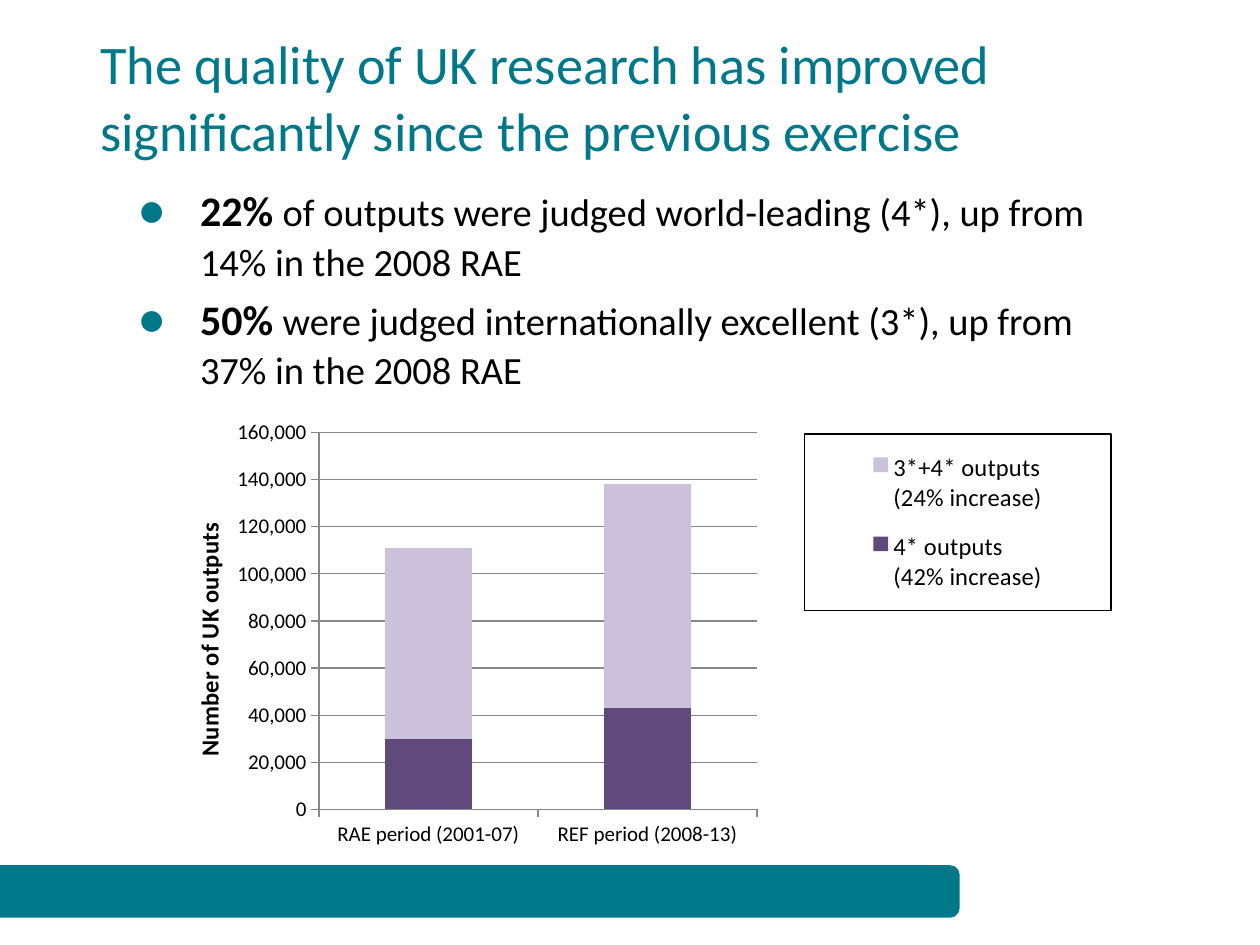
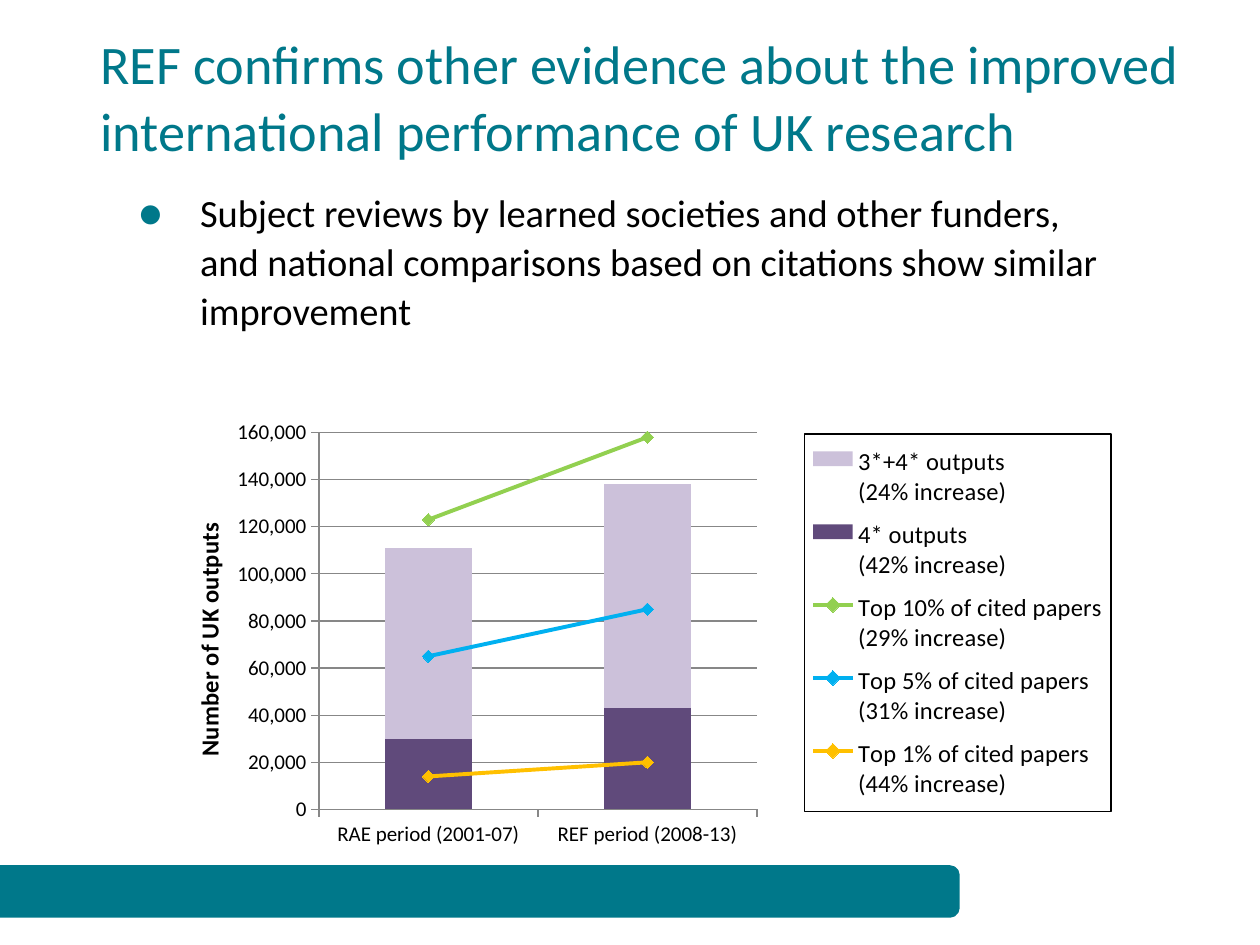
from dataclasses import dataclass
from typing import Any

from lxml import etree
from pptx import Presentation
from pptx import util as u
from pptx.chart.data import CategoryChartData
from pptx.dml.color import RGBColor
from pptx.enum import chart as charts, shapes, text
from pptx.oxml import parse_xml
from pptx.oxml.ns import nsdecls, qn

EMU_PER_PX = 914400 / 126
FONT = "Calibri"
TEAL, BLACK, GREY = "00788A", "000000", "878787"
PERIODS = ("RAE period (2001-07)", "REF period (2008-13)")
AXIS_TOP, AXIS_STEP = 160000, 20000
LINE_AXES = (50010, 50020)


@dataclass(frozen=True)
class Area:
    left: int
    top: int
    width: int
    height: int

    def emu(self) -> list[int]:
        return [px(side) for side in (self.left, self.top, self.width, self.height)]


@dataclass(frozen=True)
class Measure:
    name: str
    values: tuple[int, int]
    colour: str


@dataclass(frozen=True)
class Bullet:
    body: str
    lead: str = ""


@dataclass(frozen=True)
class Content:
    title: str
    bullets: tuple[Bullet, ...]
    legend_height: int
    lines: tuple[Measure, ...] = ()


TITLE_AREA = Area(88, 39, 1113, 113)
BAND_AREA = Area(-11, 867, 969, 49)
BULLET_AREA = Area(137, 186, 974, 129)
CHART_AREA = Area(178, 403, 965, 462)

OUTPUTS = (
    Measure("4* outputs\n(42% increase)", (30000, 43000), "604A7B"),
    Measure("3*+4* outputs\n(24% increase)", (81000, 95000), "CCC1DA"),
)
CITATIONS = (
    Measure("Top 10% of cited papers\n(29% increase)", (123000, 158000), "92D050"),
    Measure("Top 5% of cited papers\n(31% increase)", (65000, 85000), "00B0F0"),
    Measure("Top 1% of cited papers\n(44% increase)", (14000, 20000), "FFC000"),
)
CONTENTS = (
    Content(
        "The quality of UK research has improved significantly since the previous exercise",
        (
            Bullet("of outputs were judged world-leading (4*), up from 14% in the 2008 RAE", "22% "),
            Bullet("were judged internationally excellent (3*), up from 37% in the 2008 RAE", "50% "),
        ),
        legend_height=177,
    ),
    Content(
        "REF confirms other evidence about the improved international performance of UK research",
        (
            Bullet(
                "Subject reviews by learned societies and other funders, and national "
                "comparisons based on citations show similar improvement"
            ),
        ),
        legend_height=378,
        lines=CITATIONS,
    ),
)


def px(length: int) -> int:
    return round(length * EMU_PER_PX)


def rgb(colour: str) -> RGBColor:
    return RGBColor.from_string(colour)


def assign(target: Any, values: dict[str, Any]) -> None:
    for name, value in values.items():
        setattr(target, name, value)


def set_font(font: Any, size: float, colour: str = BLACK, bold: bool = False) -> None:
    assign(font, {"name": FONT, "size": u.Pt(size), "bold": bold})
    font.color.rgb = rgb(colour)


def paint(format_: Any, colour: str) -> None:
    format_.fill.solid()
    format_.fill.fore_color.rgb = rgb(colour)


def set_line(line: Any, colour: str, width: float) -> None:
    line.color.rgb = rgb(colour)
    line.width = u.Pt(width)


def add_span(para: Any, words: str, size: float, colour: str = BLACK, bold: bool = False) -> None:
    span = para.add_run()
    span.text = words
    set_font(span.font, size, colour, bold)


def add_title(page: Any, words: str) -> None:
    frame = page.shapes.add_textbox(*TITLE_AREA.emu()).text_frame
    assign(frame, {"word_wrap": True, "vertical_anchor": text.MSO_ANCHOR.MIDDLE})
    para = frame.paragraphs[0]
    para.line_spacing = u.Pt(38)
    add_span(para, words, 31, TEAL)


def add_band(page: Any) -> None:
    band = page.shapes.add_shape(shapes.MSO_SHAPE.ROUNDED_RECTANGLE, *BAND_AREA.emu())
    band.shadow.inherit = False
    paint(band, TEAL)
    set_line(band.line, TEAL, 2)


def mark_bullet(para: Any) -> None:
    """Give the paragraph a large teal dot and a hanging indent."""
    properties = para._p.get_or_add_pPr()
    properties.set("marL", str(px(63)))
    properties.set("indent", str(-px(63)))
    for markup in (
        f'<a:buClr {nsdecls("a")}><a:srgbClr val="{TEAL}"/></a:buClr>',
        f'<a:buSzPct {nsdecls("a")} val="140000"/>',
        f'<a:buFont {nsdecls("a")} typeface="{FONT}"/>',
        f'<a:buChar {nsdecls("a")} char="•"/>',
    ):
        properties.append(parse_xml(markup))


def add_bullets(page: Any, bullets: tuple[Bullet, ...]) -> None:
    frame = page.shapes.add_textbox(*BULLET_AREA.emu()).text_frame
    margins = {f"margin_{side}": 0 for side in ("left", "top", "right", "bottom")}
    assign(frame, {"word_wrap": True, **margins})
    for index, bullet in enumerate(bullets):
        para = frame.add_paragraph() if index else frame.paragraphs[0]
        assign(para, {"line_spacing": u.Pt(28), "space_after": u.Pt(6)})
        mark_bullet(para)
        if bullet.lead:
            add_span(para, bullet.lead, 24, bold=True)
        add_span(para, bullet.body, 22)


def place(part: Any, index: int, inner: bool = False, **fractions: float) -> None:
    """Fix a chart part at fractions of the chart area."""
    for old in part.findall(qn("c:layout")):
        part.remove(old)
    layout = parse_xml(f'<c:layout {nsdecls("c")}><c:manualLayout/></c:layout>')
    settings: dict[str, Any] = {"layoutTarget": "inner"} if inner else {}
    settings |= {"xMode": "edge", "yMode": "edge"}
    for tag, value in (settings | fractions).items():
        etree.SubElement(layout[0], qn(f"c:{tag}")).set("val", str(value))
    part.insert(index, layout)


def move_to_lines(chart: Any) -> None:
    """Turn the series after the stacked outputs into lines on a hidden right axis."""
    cat_id, val_id = LINE_AXES
    bars = chart.element.find(".//" + qn("c:barChart"))
    lines = parse_xml(
        f'<c:lineChart {nsdecls("c")}><c:grouping val="standard"/><c:varyColors val="0"/>'
        f'<c:marker val="1"/><c:axId val="{cat_id}"/><c:axId val="{val_id}"/></c:lineChart>'
    )
    for series in bars.findall(qn("c:ser"))[len(OUTPUTS):]:
        for flag in series.findall(qn("c:invertIfNegative")):
            series.remove(flag)
        lines.find(qn("c:marker")).addprevious(series)
    bars.addnext(lines)
    last_axis = chart.element.find(".//" + qn("c:valAx"))
    for tag, own, other, side, limit, crosses in (
        ("valAx", val_id, cat_id, "r", f'<c:max val="{AXIS_TOP}"/><c:min val="0"/>', "max"),
        ("catAx", cat_id, val_id, "b", "", "autoZero"),
    ):
        last_axis.addnext(parse_xml(
            f'<c:{tag} {nsdecls("c")}><c:axId val="{own}"/>'
            f'<c:scaling><c:orientation val="minMax"/>{limit}</c:scaling>'
            f'<c:delete val="1"/><c:axPos val="{side}"/>'
            f'<c:crossAx val="{other}"/><c:crosses val="{crosses}"/></c:{tag}>'
        ))


def format_axes(chart: Any) -> None:
    category, value = chart.category_axis, chart.value_axis
    for axis in (category, value):
        axis.major_tick_mark = charts.XL_TICK_MARK.OUTSIDE
        set_font(axis.tick_labels.font, 12)
        set_line(axis.format.line, GREY, 0.75)
    assign(value, {
        "minimum_scale": 0, "maximum_scale": AXIS_TOP,
        "major_unit": AXIS_STEP, "has_major_gridlines": True,
    })
    assign(value.tick_labels, {"number_format": "#,##0", "number_format_is_linked": False})
    set_line(value.major_gridlines.format.line, GREY, 0.75)
    frame = value.axis_title.text_frame
    add_span(frame.paragraphs[0], "Number of UK outputs", 14, bold=True)
    title = chart.element.find(".//" + qn("c:valAx")).find(qn("c:title"))
    body = title.find(".//" + qn("a:bodyPr"))
    body.set("rot", "-5400000")
    body.set("vert", "horz")
    place(title, 1, x=0.01, y=0.25)


def format_legend(chart: Any, height: int) -> None:
    chart.has_legend = True
    legend = chart.legend
    assign(legend, {"position": charts.XL_LEGEND_POSITION.RIGHT, "include_in_layout": False})
    set_font(legend.font, 14)
    part = chart.element.find(".//" + qn("c:legend"))
    part.find(qn("c:txPr")).addprevious(parse_xml(
        f'<c:spPr {nsdecls("c", "a")}><a:ln w="9525"><a:solidFill>'
        f'<a:srgbClr val="{BLACK}"/></a:solidFill></a:ln></c:spPr>'
    ))
    place(part, 1, x=0.649, y=0.067, w=0.318, h=round(height / CHART_AREA.height, 3))


def add_outputs_chart(page: Any, content: Content) -> None:
    data = CategoryChartData()
    data.categories = PERIODS
    for measure in OUTPUTS + content.lines:
        data.add_series(measure.name, measure.values)
    chart = page.shapes.add_chart(
        charts.XL_CHART_TYPE.COLUMN_STACKED, *CHART_AREA.emu(), data
    ).chart
    chart.has_title = False
    set_font(chart.font, 10)
    format_axes(chart)
    if content.lines:
        move_to_lines(chart)
    bars, *line_plots = chart.plots
    assign(bars, {"gap_width": 150, "overlap": 100, "vary_by_categories": False})
    for series, measure in zip(bars.series, OUTPUTS):
        paint(series.format, measure.colour)
    for plot in line_plots:
        for series, measure in zip(plot.series, content.lines):
            series.smooth = False
            set_line(series.format.line, measure.colour, 2.25)
            assign(series.marker, {"style": charts.XL_MARKER_STYLE.DIAMOND, "size": 7})
            paint(series.marker.format, measure.colour)
            set_line(series.marker.format.line, measure.colour, 0.75)
    format_legend(chart, content.legend_height)
    plot_area = chart.element.find(".//" + qn("c:plotArea"))
    place(plot_area, 0, inner=True, x=0.146, y=0.064, w=0.454, h=0.816)


def main() -> None:
    deck = Presentation()
    assign(deck, {"slide_width": px(1260), "slide_height": px(945)})
    for content in CONTENTS:
        page = deck.slides.add_slide(deck.slide_layouts[6])
        add_title(page, content.title)
        add_band(page)
        add_bullets(page, content.bullets)
        add_outputs_chart(page, content)
    deck.save("out.pptx")


if __name__ == "__main__":
    main()
